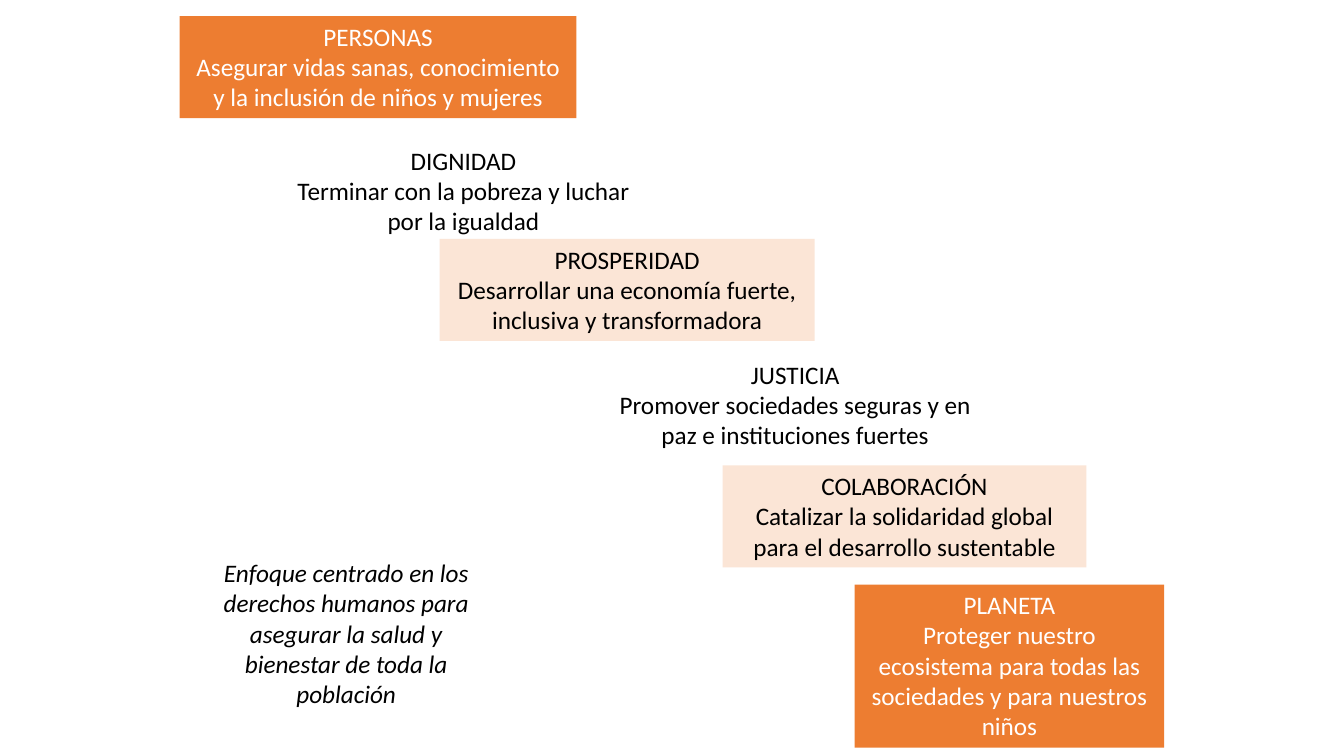
from pptx import Presentation
from pptx.dml.color import RGBColor
from pptx.enum.shapes import MSO_SHAPE
from pptx.enum.text import MSO_ANCHOR, PP_ALIGN
from pptx.util import Cm, Pt

RECT = MSO_SHAPE.RECTANGLE
TOP = MSO_ANCHOR.TOP
CENTER = PP_ALIGN.CENTER

ORANGE, PEACH, WHITE, BLACK = "ED7D31", "FBE5D6", "FFFFFF", "000000"
ROW_H, TALL_H = 2.57, 4.11

# Staircase of principles: left, top, width, height (cm), fill, heading, text
PRINCIPLES = [
    (4.53, 0.41, 10, ROW_H, ORANGE, "PERSONAS",
     "Asegurar vidas sanas, conocimiento y la inclusión de niños y mujeres"),
    (7.21, 3.53, 8.94, ROW_H, None, "DIGNIDAD",
     "Terminar con la pobreza y luchar por la igualdad"),
    (11.08, 6.02, 9.45, ROW_H, PEACH, "PROSPERIDAD",
     "Desarrollar una economía fuerte, inclusiva y transformadora"),
    (15.14, 8.92, 9.8, ROW_H, None, "JUSTICIA",
     "Promover sociedades seguras y en paz e instituciones fuertes"),
    (18.21, 11.73, 9.17, ROW_H, PEACH, "COLABORACIÓN",
     "Catalizar la solidaridad global para el desarrollo sustentable"),
    (21.54, 14.73, 7.8, TALL_H, ORANGE, "PLANETA",
     "Proteger nuestro ecosistema para todas las sociedades y para nuestros niños"),
]
APPROACH_BOX = (5.13, 13.92, 7.19, TALL_H)
APPROACH = ("Enfoque centrado en los derechos humanos para asegurar la salud "
            "y bienestar de toda la población")


def rgb(color):
    return RGBColor.from_string(color)


def add_text(p, text, size=18, color=BLACK, italic=False, font="Calibri"):
    p.alignment = CENTER
    r = p.add_run()
    r.text = text
    r.font.name, r.font.size, r.font.italic = font, Pt(size), italic
    r.font.color.rgb = rgb(color)


def add_block(s, box, lines, fill=None, **text_format):
    """Place centred lines in a box, on a filled rectangle if a fill is given."""
    box = [Cm(v) for v in box]
    if fill:
        sp = s.shapes.add_shape(RECT, *box)
        sp.shadow.inherit = False
        sp.fill.solid()
        sp.fill.fore_color.rgb = rgb(fill)
        sp.line.fill.background()
    else:
        sp = s.shapes.add_textbox(*box)
    tf = sp.text_frame
    tf.word_wrap = True
    tf.vertical_anchor = TOP
    for i, line in enumerate(lines):
        p = tf.add_paragraph() if i else tf.paragraphs[0]
        add_text(p, line, **text_format)


def add_principles(s):
    for *box, fill, heading, text in PRINCIPLES:
        color = WHITE if fill == ORANGE else BLACK
        add_block(s, box, [heading, text], fill=fill, color=color)


def main():
    prs = Presentation()
    prs.slide_width, prs.slide_height = Cm(33.87), Cm(19.05)
    s = prs.slides.add_slide(prs.slide_layouts[6])  # blank: no title shows

    # Staircase of principles
    add_principles(s)
    # Closing statement at lower left
    add_block(s, APPROACH_BOX, [APPROACH], italic=True)

    prs.save("out.pptx")


if __name__ == "__main__":
    main()
